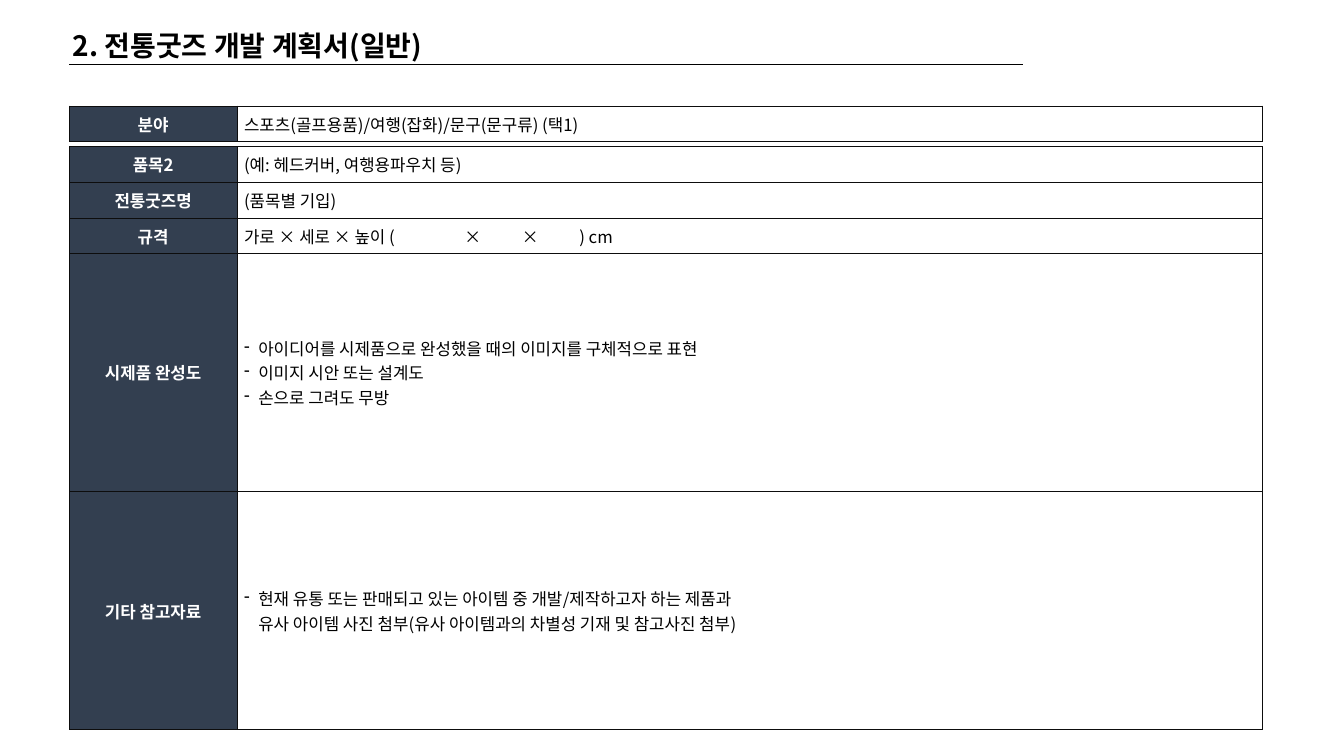
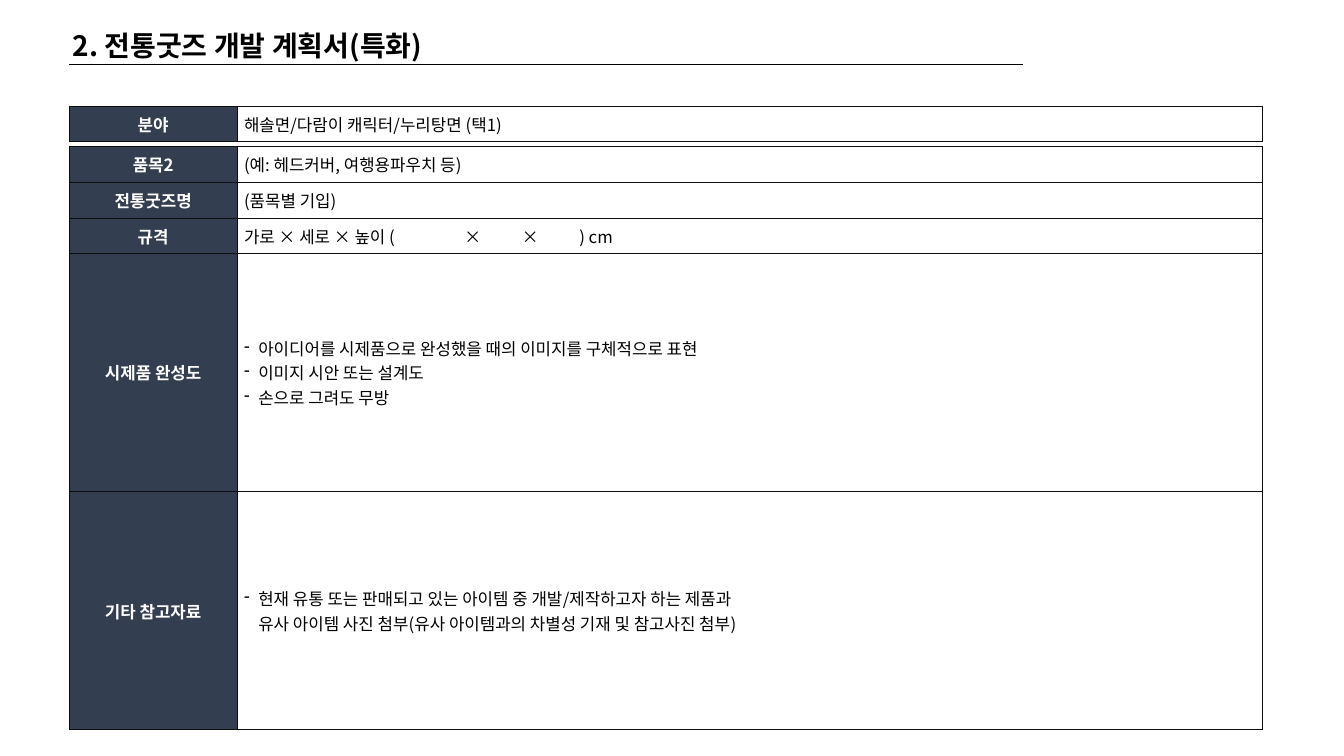
import lxml.etree
import pptx
import pptx.dml.color
import pptx.enum.shapes
import pptx.enum.text
import pptx.oxml.ns
import pptx.util

Cm = pptx.util.Cm
Pt = pptx.util.Pt
RGBColor = pptx.dml.color.RGBColor
qn = pptx.oxml.ns.qn

NAVY = RGBColor(0x33, 0x3F, 0x50)
WHITE = RGBColor(0xFF, 0xFF, 0xFF)
BLACK = RGBColor(0x00, 0x00, 0x00)
BORDER = RGBColor(0x0D, 0x0D, 0x0D)
FONT = "Noto Sans CJK KR"

LEFT = Cm(1.75)
LABEL_WIDTH = Cm(4.22)
CONTENT_WIDTH = Cm(25.83)
SHORT_ROW = Cm(0.9)
TALL_ROW = Cm(6)
BULLET_INDENT = Cm(0.36)
SIZE_TABS = [Cm(5.55 + 1.45 * index) for index in range(3)]

DETAIL_ROWS = [
    ("품목2", "(예: 헤드커버, 여행용파우치 등)", SHORT_ROW, False),
    ("전통굿즈명", "(품목별 기입)", SHORT_ROW, False),
    ("규격", "가로 × 세로 × 높이 (\t×\t×\t) cm", SHORT_ROW, False),
    ("시제품 완성도",
     "아이디어를 시제품으로 완성했을 때의 이미지를 구체적으로 표현\n"
     "이미지 시안 또는 설계도\n"
     "손으로 그려도 무방", TALL_ROW, True),
    ("기타 참고자료",
     "현재 유통 또는 판매되고 있는 아이템 중 개발/제작하고자 하는 제품과\v"
     "유사 아이템 사진 첨부(유사 아이템과의 차별성 기재 및 참고사진 첨부)", TALL_ROW, True),
]

PLANS = [
    ("2. 전통굿즈 개발 계획서(일반)", "스포츠(골프용품)/여행(잡화)/문구(문구류) (택1)"),
    ("2. 전통굿즈 개발 계획서(특화)", "해솔면/다람이 캐릭터/누리탕면 (택1)"),
]


def style_paragraph(paragraph, size, color, bold):
    font = paragraph.font
    font.size = Pt(size)
    font.bold = bold
    font.color.rgb = color
    font.name = FONT
    properties = paragraph._p.get_or_add_pPr().find(qn("a:defRPr"))
    lxml.etree.SubElement(properties, qn("a:ea"), typeface=FONT)


def add_dash_bullet(paragraph):
    properties = paragraph._p.get_or_add_pPr()
    properties.set("marL", str(BULLET_INDENT))
    properties.set("indent", str(-BULLET_INDENT))
    bullet = lxml.etree.Element(qn("a:buChar"), char="-")
    properties.insert(0, bullet)


def add_tab_stops(paragraph, positions):
    tabs = lxml.etree.Element(qn("a:tabLst"))
    for position in positions:
        lxml.etree.SubElement(tabs, qn("a:tab"), pos=str(position), algn="l")
    paragraph._p.get_or_add_pPr().insert(0, tabs)


def add_borders(cell):
    properties = cell._tc.get_or_add_tcPr()
    for index, side in enumerate(("a:lnL", "a:lnR", "a:lnT", "a:lnB")):
        line = lxml.etree.Element(qn(side), w=str(Pt(0.5)))
        fill = lxml.etree.SubElement(line, qn("a:solidFill"))
        lxml.etree.SubElement(fill, qn("a:srgbClr"), val=str(BORDER))
        properties.insert(index, line)


def fill_cell(cell, text, is_label, bulleted=False):
    cell.fill.solid()
    cell.fill.fore_color.rgb = NAVY if is_label else WHITE
    add_borders(cell)
    cell.margin_left = cell.margin_right = Cm(0.18)
    cell.margin_top = cell.margin_bottom = 0
    cell.vertical_anchor = pptx.enum.text.MSO_ANCHOR.MIDDLE
    cell.text_frame.text = text
    for paragraph in cell.text_frame.paragraphs:
        style_paragraph(paragraph, 12, WHITE if is_label else BLACK, is_label)
        if is_label:
            paragraph.alignment = pptx.enum.text.PP_ALIGN.CENTER
        if bulleted:
            add_dash_bullet(paragraph)
        if "\t" in text:
            add_tab_stops(paragraph, SIZE_TABS)


def add_form_table(slide, left, top, rows):
    height = sum(row[2] for row in rows)
    frame = slide.shapes.add_table(
        len(rows), 2, left, top, LABEL_WIDTH + CONTENT_WIDTH, height)
    table = frame.table
    table.first_row = False
    table.horz_banding = False
    table.columns[0].width = LABEL_WIDTH
    table.columns[1].width = CONTENT_WIDTH
    for index, (label, content, row_height, bulleted) in enumerate(rows):
        table.rows[index].height = row_height
        fill_cell(table.cell(index, 0), label, True)
        fill_cell(table.cell(index, 1), content, False, bulleted)


def add_title(slide, left, top, text):
    box = slide.shapes.add_textbox(left + Cm(0.08), top, Cm(12.27), Cm(0.86))
    frame = box.text_frame
    frame.word_wrap = True
    frame.auto_size = pptx.enum.text.MSO_AUTO_SIZE.SHAPE_TO_FIT_TEXT
    frame.margin_left = frame.margin_right = 0
    frame.margin_top = frame.margin_bottom = 0
    frame.text = text
    style_paragraph(frame.paragraphs[0], 20, BLACK, True)

    line_top = top + Cm(0.92)
    underline = slide.shapes.add_connector(
        pptx.enum.shapes.MSO_CONNECTOR.STRAIGHT,
        left, line_top, left + Cm(24.03), line_top)
    underline.line.color.rgb = BLACK
    underline.line.width = Pt(0.75)
    lxml.etree.SubElement(underline._element.spPr, qn("a:effectLst"))


def add_plan_slide(presentation, title, field):
    slide = presentation.slides.add_slide(presentation.slide_layouts[6])
    add_title(slide, LEFT, Cm(0.71), title)
    add_form_table(slide, LEFT, Cm(2.67), [("분야", field, SHORT_ROW, False)])
    add_form_table(slide, LEFT, Cm(3.69), DETAIL_ROWS)


def main():
    presentation = pptx.Presentation()
    presentation.slide_width = Cm(33.87)
    presentation.slide_height = Cm(19.05)
    for title, field in PLANS:
        add_plan_slide(presentation, title, field)
    presentation.save("out.pptx")


if __name__ == "__main__":
    main()
